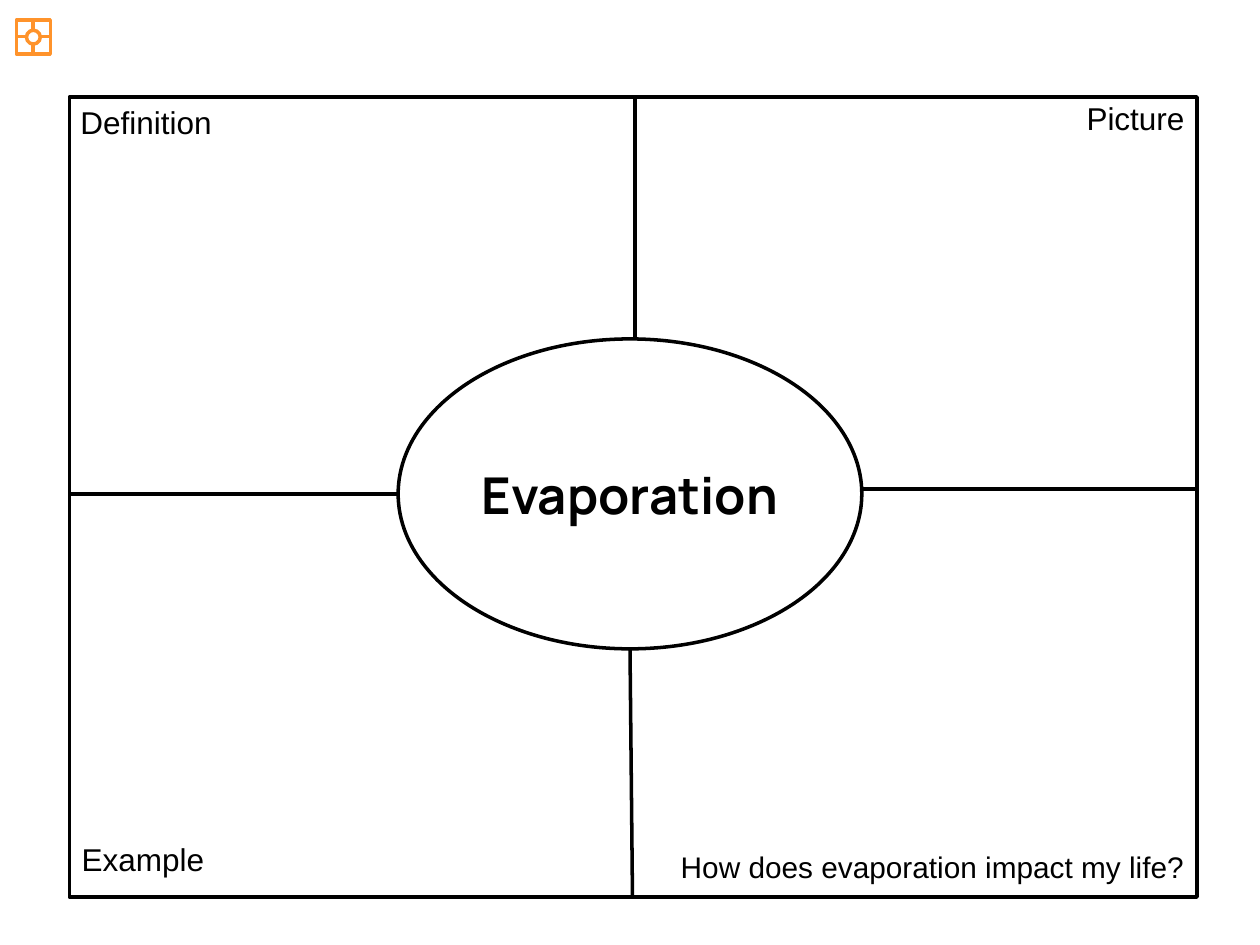
from lxml import etree
from pptx import Presentation
from pptx import util as u
from pptx.dml.color import RGBColor
from pptx.enum import shapes, text
from pptx.oxml.ns import qn

BLACK = RGBColor(0x00, 0x00, 0x00)
WHITE = RGBColor(0xFF, 0xFF, 0xFF)
ORANGE = RGBColor(0xFF, 0x93, 0x2B)
LINE_WIDTH = u.Pt(2)


def add_outline(slide, kind, box, colour, fill=None):
    outline = slide.shapes.add_shape(kind, *map(u.Inches, box))
    outline.shadow.inherit = False
    if fill is None:
        outline.fill.background()
    else:
        outline.fill.solid()
        outline.fill.fore_color.rgb = fill
    outline.line.color.rgb = colour
    outline.line.width = LINE_WIDTH


def add_divider(slide, start, end, colour):
    divider = slide.shapes.add_connector(
        shapes.MSO_CONNECTOR.STRAIGHT, *map(u.Inches, (*start, *end)))
    divider.line.color.rgb = colour
    divider.line.width = LINE_WIDTH
    etree.SubElement(divider._element.spPr, qn("a:effectLst"))


def add_organizer(slide, frame, oval, arms, colour):
    """Draw a frame in four parts around an oval.

    The arms give, relative to the frame, the x of the top arm, the x of the
    bottom arm at the oval and at the frame, and the y of the left and right arms.
    """
    left, top, width, height = frame
    oval_left, oval_top, oval_width, oval_height = oval
    right, bottom = left + width, top + height
    oval_right, oval_bottom = oval_left + oval_width, oval_top + oval_height
    top_x, bottom_inner_x, bottom_outer_x = (left + x for x in arms[:3])
    left_y, right_y = (top + y for y in arms[3:])

    add_outline(slide, shapes.MSO_SHAPE.RECTANGLE, frame, colour)
    for start, end in (
        ((top_x, top), (top_x, oval_top)),
        ((bottom_inner_x, oval_bottom), (bottom_outer_x, bottom)),
        ((left, left_y), (oval_left, left_y)),
        ((oval_right, right_y), (right, right_y)),
    ):
        add_divider(slide, start, end, colour)
    add_outline(slide, shapes.MSO_SHAPE.OVAL, oval, colour, WHITE)


def write_text(holder, words, size, font, align, bold=False):
    frame = holder.text_frame
    frame.text = words
    frame.word_wrap = True
    frame.auto_size = text.MSO_AUTO_SIZE.NONE
    frame.vertical_anchor = text.MSO_ANCHOR.TOP
    paragraph = frame.paragraphs[0]
    paragraph.alignment = align
    run_font = paragraph.runs[0].font
    run_font.name = font
    run_font.size = u.Pt(size)
    run_font.bold = bold
    run_font.color.rgb = BLACK


def add_term(slide, oval):
    left, top, width, height = oval
    term = slide.shapes.title
    term.left, term.top = u.Inches(left + 0.11), u.Inches(top + 0.94)
    term.width, term.height = u.Inches(width - 0.22), u.Inches(0.59)
    write_text(term, "Evaporation", 29, "Manrope", text.PP_ALIGN.CENTER, True)
    slide.shapes._spTree.append(term._element)  # in front of the oval


def add_prompts(slide, frame):
    """Label each corner of the frame."""
    left, top, width, height = frame
    right, bottom = left + width, top + height
    start, end = text.PP_ALIGN.LEFT, text.PP_ALIGN.RIGHT
    for words, x, y, prompt_width, size, align in (
        ("Definition", left - 0.01, top, 1.3, 18, start),
        ("Example", left, bottom - 0.5, 1.3, 18, start),
        ("Picture", right - 1.1, top - 0.03, 1.1, 18, end),
        ("How does evaporation impact my life?",
         right - 4.93, bottom - 0.43, 4.93, 17, end),
    ):
        prompt = slide.shapes.add_textbox(
            *map(u.Inches, (x, y, prompt_width, 0.4)))
        write_text(prompt, words, size, "Arial", align)


def main():
    prs = Presentation()
    prs.slide_width, prs.slide_height = u.Inches(10), u.Inches(7.5)
    slide = prs.slides.add_slide(prs.slide_layouts.get_by_name("Title Only"))

    frame = (0.55, 0.77, 8.95, 6.35)
    oval = (3.16, 2.69, 3.68, 2.46)
    add_organizer(slide, frame, oval, (4.49, 4.45, 4.47, 3.15, 3.11), BLACK)
    add_term(slide, oval)
    add_prompts(slide, frame)

    icon_frame = (0.13, 0.16, 0.27, 0.27)
    icon_oval = (0.21, 0.24, 0.11, 0.11)
    add_organizer(slide, icon_frame, icon_oval, (0.13,) * 5, ORANGE)
    prs.save("out.pptx")


if __name__ == "__main__":
    main()
